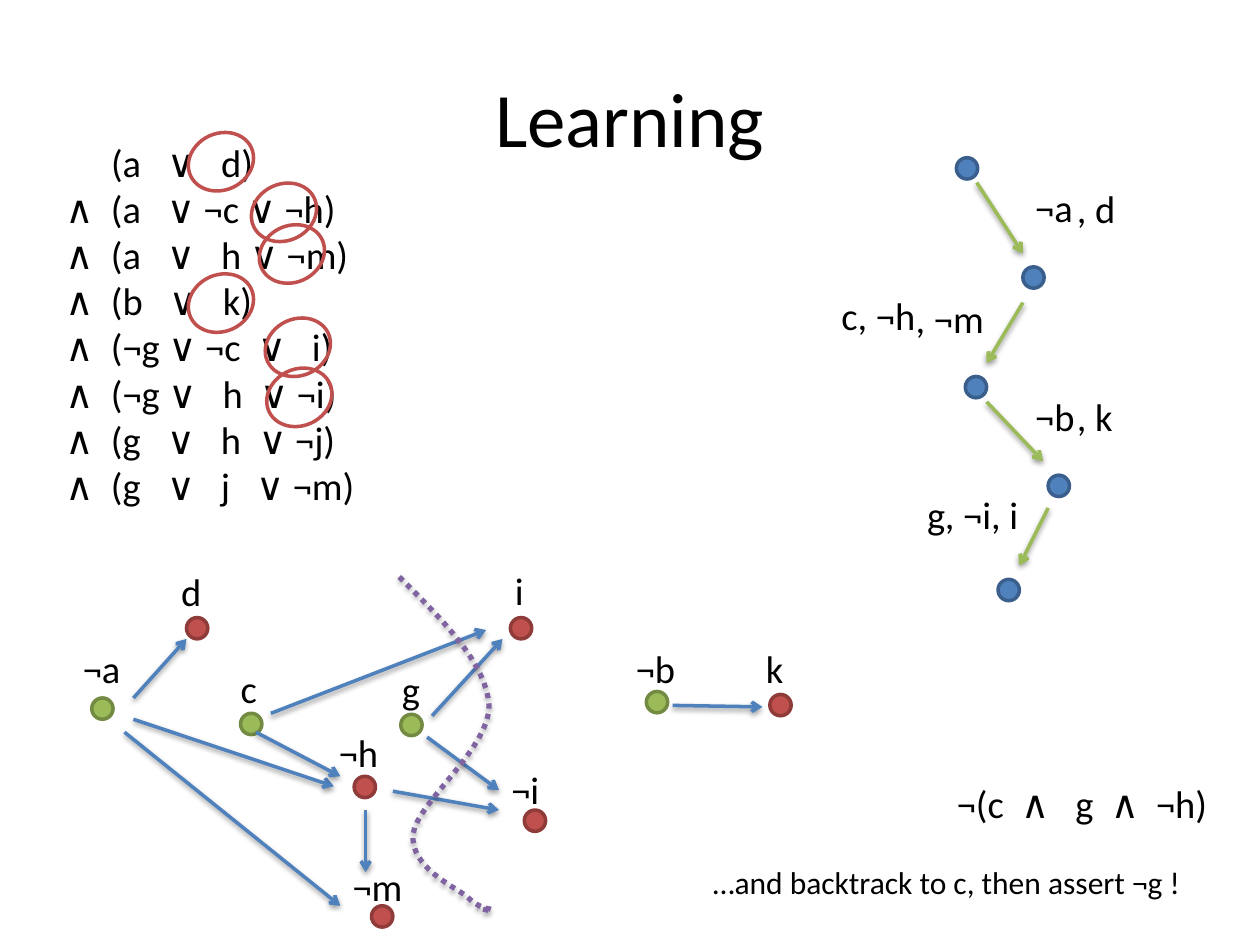
from lxml.etree import SubElement
from pptx import Presentation
from pptx.dml.color import RGBColor
from pptx.enum.dml import MSO_LINE as Dash
from pptx.enum.shapes import MSO_CONNECTOR as Link, MSO_SHAPE as Kind
from pptx.enum.text import MSO_ANCHOR as Anchor, MSO_AUTO_SIZE as Auto, PP_ALIGN as Align
from pptx.oxml.ns import qn
from pptx.util import Cm, Pt

BLACK = RGBColor(0x00, 0x00, 0x00)
BLUE = RGBColor(0x4F, 0x81, 0xBD)
GREEN = RGBColor(0x9B, 0xBB, 0x59)
RED = RGBColor(0xC0, 0x50, 0x4D)
PURPLE = RGBColor(0x80, 0x64, 0xA2)
EDGE = {
    BLUE: RGBColor(0x3A, 0x5F, 0x8C),
    GREEN: RGBColor(0x73, 0x8A, 0x42),
    RED: RGBColor(0x8E, 0x3B, 0x39),
}


class Board:
    font = "Calibri"
    size = 22
    dot = 0.43
    row = 1.19

    def __init__(self, slide):
        self.slide = slide
        self.shapes = slide.shapes

    def text(self, lines, x, y, w, h=row, size=size, align=Align.LEFT, wrap=True):
        box = self.shapes.add_textbox(Cm(x), Cm(y), Cm(w), Cm(h))
        frame = box.text_frame
        frame.word_wrap = wrap
        frame.auto_size = Auto.SHAPE_TO_FIT_TEXT
        frame.text = lines
        for par in frame.paragraphs:
            par.alignment = align
            par.font.name = self.font
            par.font.size = Pt(size)
            par.font.color.rgb = BLACK
        return frame

    def title(self, words, x, y, w, h):
        frame = self.text(words, x, y, w, h, 44, Align.CENTER)
        frame.auto_size = Auto.NONE
        frame.vertical_anchor = Anchor.MIDDLE

    def label(self, words, x, y, w):
        self.text(words, x, y, w, wrap=False)

    def oval(self, x, y, w, h, edge):
        shape = self.shapes.add_shape(Kind.OVAL, Cm(x), Cm(y), Cm(w), Cm(h))
        shape.shadow.inherit = False
        shape.fill.background()
        shape.line.color.rgb = edge
        shape.line.width = Pt(2)
        return shape

    def node(self, x, y, color):
        shape = self.oval(x, y, self.dot, self.dot, EDGE[color])
        shape.fill.solid()
        shape.fill.fore_color.rgb = color

    def ring(self, x, y):
        self.oval(x, y, 1.35, 1.14, RED).rotation = 335

    def shade(self, shape, alpha, dist):
        fx = SubElement(shape._element.spPr, qn("a:effectLst"))
        drop = SubElement(fx, qn("a:outerShdw"), blurRad=str(Pt(3.1)),
                          dist=str(Pt(dist)), dir="5400000", rotWithShape="0")
        tint = SubElement(drop, qn("a:srgbClr"), val="000000")
        SubElement(tint, qn("a:alpha"), val=str(alpha * 1000))

    def arrow(self, x1, y1, x2, y2, color):
        line = self.shapes.add_connector(Link.STRAIGHT, Cm(x1), Cm(y1), Cm(x2), Cm(y2))
        line.line.color.rgb = color
        line.line.width = Pt(2)
        SubElement(line.line._get_or_add_ln(), qn("a:tailEnd"), type="arrow")
        self.shade(line, 38, 1.6)

    def curve(self, start, bends, color, steps=16):
        pts, p0 = [], start
        for p1, p2, p3 in bends:
            for i in range(1, steps + 1):
                t = i / steps
                u = 1 - t
                pts.append([Cm(u**3 * a + 3 * u * u * t * b + 3 * u * t * t * c + t**3 * d)
                            for a, b, c, d in zip(p0, p1, p2, p3)])
            p0 = p3
        pen = self.shapes.build_freeform(Cm(start[0]), Cm(start[1]))
        pen.add_line_segments(pts, close=False)
        shape = pen.convert_to_shape()
        shape.fill.background()
        shape.line.color.rgb = color
        shape.line.width = Pt(3)
        shape.line.dash_style = Dash.ROUND_DOT
        self.shade(shape, 35, 1.8)


CLAUSES = """(a   ∨   d)
∧  (a   ∨ ¬c ∨ ¬h)
∧  (a   ∨   h ∨ ¬m)
∧  (b   ∨   k)
∧  (¬g ∨ ¬c  ∨   i)
∧  (¬g ∨   h  ∨ ¬i)
∧  (g   ∨   h  ∨ ¬j)
∧  (g   ∨   j   ∨ ¬m)"""

RINGS = [(3.78, 2.69), (5.05, 3.71), (5.21, 4.55), (3.78, 5.54), (5.33, 6.43), (5.36, 7.44)]

# Search trail: nodes from the top down, arrows between them, labels
TRAIL = [(19.28, 3.18), (20.62, 5.38), (19.46, 7.59), (21.13, 9.58), (20.12, 11.68)]
STEPS = [
    (19.69, 3.68, 20.62, 5.11),
    (20.62, 6.1, 19.89, 7.32),
    (19.89, 8.1, 21.03, 9.3),
    (21.13, 10.24, 20.55, 11.4),
]
NAMES = [
    ("¬a", 20.62, 3.58, 1.27), (", d", 21.46, 3.61, 1.3),
    ("c", 16.71, 5.77, 0.84), (", ¬h", 17.04, 5.77, 1.78), (", ¬m", 18.21, 5.82, 2.62),
    ("¬b", 20.62, 7.8, 1.5), (", k", 21.46, 7.8, 1.3),
    ("g", 18.44, 9.78, 0.89), (", ¬i, i", 18.8, 9.78, 2.46),
]

# Implication graph: label with its box, node place, colour
GRAPH = [
    ("¬a", 1.42, 12.88, 1.27, 1.85, 14.07, GREEN),
    ("d", 3.4, 11.33, 0.91, 3.76, 12.45, RED),
    ("c", 4.6, 13.28, 0.84, 4.85, 14.38, GREEN),
    ("¬h", 6.58, 14.58, 1.32, 7.14, 15.65, RED),
    ("¬m", 6.86, 17.27, 1.52, 7.49, 18.26, RED),
    ("¬b", 12.57, 12.88, 1.32, 13.03, 13.94, GREEN),
    ("k", 15.19, 12.88, 0.86, 15.52, 14, RED),
    ("g", 7.85, 13.31, 0.89, 8.08, 14.4, GREEN),
    ("i", 10.13, 11.3, 0.69, 10.29, 12.45, RED),
    ("¬i", 10.06, 15.32, 1.09, 10.57, 16.33, RED),
]
EDGES = [
    (2.69, 14.07, 3.76, 12.88),
    (2.69, 14.5, 6.73, 15.85),
    (5.16, 14.76, 6.86, 15.65),
    (2.51, 14.76, 6.86, 18.26),
    (7.37, 16.33, 7.37, 17.58),
    (13.56, 14.22, 15.37, 14.25),
    (5.46, 14.38, 9.8, 12.7),
    (8.71, 14.43, 10.13, 12.88),
    (8.61, 14.86, 10.06, 15.93),
    (7.92, 15.95, 10.06, 16.33),
]
CUT = [
    ((8.92, 12.5), (9.8, 13.36), (9.86, 14.22)),
    ((9.88, 15.09), (8.41, 16.18), (8.33, 16.81)),
    ((8.26, 17.48), (9.14, 17.86), (9.42, 18.08)),
    ((9.68, 18.34), (9.88, 18.31), (9.91, 18.34)),
    ((9.96, 18.39), (9.68, 18.31), (9.63, 18.31)),
]


def main():
    deck = Presentation()
    deck.slide_width, deck.slide_height = Cm(25.4), Cm(19.05)
    board = Board(deck.slides.add_slide(deck.slide_layouts[6]))

    # Title and clauses; the first clause is indented past the ∧ column
    board.title("Learning", 1.27, 0.76, 22.86, 3.18)
    frame = board.text(CLAUSES, 1.07, 2.67, 8.05, 7.77)
    frame.paragraphs[0]._p.get_or_add_pPr().set("marL", str(Cm(0.92)))
    for spot in RINGS:
        board.ring(*spot)

    # Search trail
    for spot in TRAIL:
        board.node(*spot, BLUE)
    for step in STEPS:
        board.arrow(*step, GREEN)
    for words, x, y, w in NAMES:
        if words.startswith(","):
            board.text(words, x, y, w)
        else:
            board.label(words, x, y, w)

    # Implication graph and its cut
    for words, x, y, w, left, top, color in GRAPH:
        board.label(words, x, y, w)
        board.node(left, top, color)
    for edge in EDGES:
        board.arrow(*edge, BLUE)
    board.curve((8.05, 11.63), CUT, PURPLE)

    # Learned clause
    board.text("¬(c  ∧   g  ∧  ¬h)", 18.16, 15.6, 6.43, align=Align.RIGHT)
    board.text("…and backtrack to c, then assert ¬g !", 14.12, 17.27, 10.72, 1.02, 18)

    deck.save("out.pptx")


if __name__ == "__main__":
    main()
